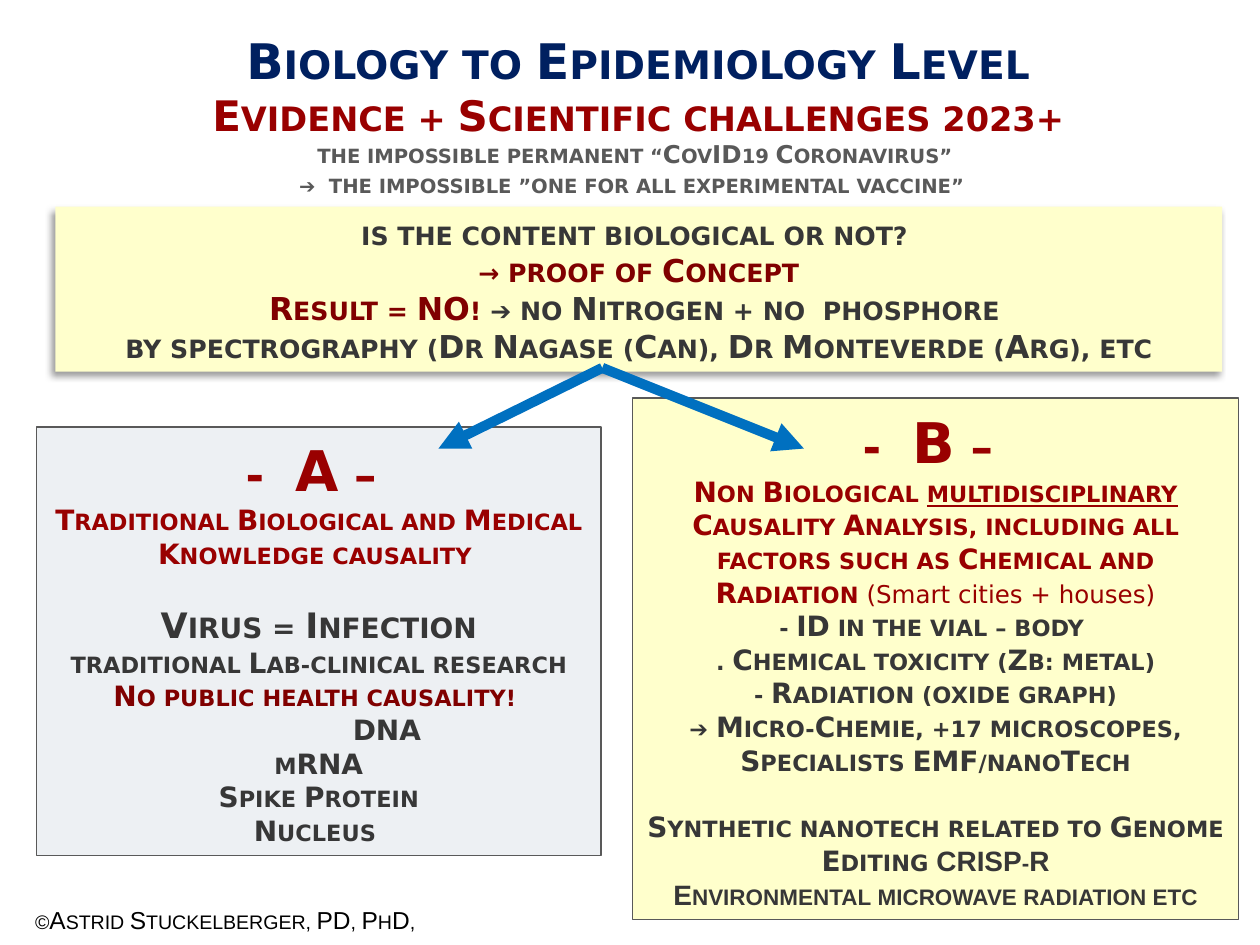
"""Build the slide that sets biological against non-biological causality."""
from dataclasses import dataclass
from typing import Optional

from lxml import etree
from pptx import Presentation
from pptx import util as u
from pptx.dml.color import RGBColor
from pptx.enum import shapes, text
from pptx.oxml import ns

SANS, ARIAL = "DejaVu Sans", "Arial"
NAVY, RED, WINE = "002060", "990000", "800000"
DARK, GREY, BLUE, BLACK = "373737", "595959", "0070C0", "000000"
CREAM, PALE = "FFFFCC", "EDF0F3"


@dataclass
class Run:
    """A stretch of text in one style."""
    words: str
    size: int = 16
    hue: str = DARK
    font: str = SANS
    bold: bool = True
    caps: bool = True
    under: bool = False


@dataclass
class Para:
    """A paragraph with its space before (points) and indent (inches)."""
    runs: list[Run]
    gap: float = 0
    left: float = 0


@dataclass
class Box:
    """A block of text, on a filled panel if it has a fill."""
    left: float
    top: float
    width: float
    height: float
    paras: list[Para]
    fill: Optional[str] = None
    edge: Optional[str] = None
    shade: bool = False
    align: text.PP_ALIGN = text.PP_ALIGN.CENTER


def line(words: str, size: int = 16, hue: str = DARK, gap: float = 0,
         left: float = 0) -> Para:
    """Return a paragraph of one run."""
    return Para([Run(words, size, hue)], gap, left)


def tint(code: str) -> RGBColor:
    """Return the colour for a hex string."""
    return RGBColor.from_string(code)


def add_shade(shape) -> None:
    """Give a shape a soft shadow to the lower left."""
    effects = shape._element.spPr.find(ns.qn("a:effectLst"))
    outer = etree.SubElement(effects, ns.qn("a:outerShdw"), blurRad=str(u.Pt(4)),
                             dist=str(u.Pt(3)), dir="8100000", algn="tr", rotWithShape="0")
    hue = etree.SubElement(outer, ns.qn("a:srgbClr"), val=BLACK)
    etree.SubElement(hue, ns.qn("a:alpha"), val="40000")


def add_run(para, run: Run) -> None:
    """Add one styled run to a paragraph."""
    part = para.add_run()
    part.text = run.words
    font = part.font
    font.name, font.size, font.bold = run.font, u.Pt(run.size), run.bold
    font.color.rgb = tint(run.hue)
    if run.under:
        font.underline = True
    if run.caps:
        part._r.get_or_add_rPr().set("cap", "small")


def add_box(slide, box: Box) -> None:
    """Draw a box and its text."""
    place = [u.Inches(n) for n in (box.left, box.top, box.width, box.height)]
    if box.fill:
        shape = slide.shapes.add_shape(shapes.MSO_SHAPE.RECTANGLE, *place)
        shape.shadow.inherit = False
        shape.fill.solid()
        shape.fill.fore_color.rgb = tint(box.fill)
        if box.edge:
            shape.line.color.rgb = tint(box.edge)
            shape.line.width = u.Pt(0.75)
        else:
            shape.line.fill.background()
        if box.shade:
            add_shade(shape)
    else:
        shape = slide.shapes.add_textbox(*place)
    frame = shape.text_frame
    frame.word_wrap = True
    frame.auto_size = text.MSO_AUTO_SIZE.SHAPE_TO_FIT_TEXT
    for index, item in enumerate(box.paras):
        para = frame.add_paragraph() if index else frame.paragraphs[0]
        para.alignment = box.align
        if item.gap:
            para.space_before = u.Pt(item.gap)
        if item.left:
            para._p.get_or_add_pPr().set("marL", str(u.Inches(item.left)))
        for run in item.runs:
            add_run(para, run)


def add_arrow(slide, start: tuple[float, float], end: tuple[float, float]) -> None:
    """Draw a thick arrow between two points."""
    arrow = slide.shapes.add_connector(shapes.MSO_CONNECTOR.STRAIGHT,
                                       *(u.Inches(n) for n in start + end))
    arrow.line.color.rgb = tint(BLUE)
    arrow.line.width = u.Pt(5.75)
    etree.SubElement(arrow.line._get_or_add_ln(), ns.qn("a:tailEnd"), type="triangle")
    etree.SubElement(arrow._element.spPr, ns.qn("a:effectLst"))


TITLE = Box(0.04, 0.19, 10.05, 1.45, [
    line("Biology to Epidemiology Level", 28, NAVY),
    line("Evidence + Scientific challenges 2023+", 24, RED),
    line("the impossible permanent “CovID19 Coronavirus” ", 14, GREY),
    line("➔  the impossible ”one for all experimental vaccine”  ", 14, GREY),
])
RIGHT = Box(5.02, 3.16, 4.81, 4.14, [
    line("-  B – ", 32, RED),
    Para([
        Run("Non Biological ", hue=RED),
        Run("multidisciplinary", hue=RED, under=True),
        Run(" Causality Analysis, including all factors such as Chemical and Radiation ",
            hue=RED),
        Run("(Smart cities + houses)", 14, RED, bold=False, caps=False),
    ]),
    line("- ID in the vial – body "),
    line(". Chemical toxicity (Zb: metal)"),
    line("- Radiation (oxide graph)"),
    line("➔ Micro-Chemie, +17 microscopes, Specialists EMF/nanoTech"),
    Para([Run("Synthetic nanotech related to Genome Editing "),
          Run("CRISP-R", font=ARIAL)], gap=19),
    Para([Run("Environmental microwave radiation etc", font=ARIAL)]),
], CREAM, GREY)
LEFT = Box(0.29, 3.39, 4.48, 3.4, [
    line("-  A – ", 32, RED),
    line("Traditional Biological and Medical Knowledge causality ", hue=RED),
    line("Virus = Infection", 20, gap=19),
    line("traditional Lab-clinical research"),
    line("No public health causality! ", hue=WINE),
    line("DNA", left=0.54),
    line("mRNA"),
    line("Spike Protein"),
    line("Nucleus "),
], PALE, GREY)
PROOF = Box(0.44, 1.64, 9.26, 1.31, [
    line("is the content biological or not? ", 18),
    line("→ proof of Concept", 18, WINE),
    Para([Run("Result = NO! ", 18, WINE), Run("➔ no Nitrogen + no  phosphore ", 18)]),
    line("by spectrography (Dr Nagase (Can), Dr Monteverde (Arg), etc", 18),
], CREAM, shade=True)
CREDIT = Box(0.18, 7.13, 3.54, 0.34, [
    Para([Run("©Astrid Stuckelberger, PD, PhD,", 14, BLACK, ARIAL, bold=False)]),
], align=text.PP_ALIGN.LEFT)


def main() -> None:
    """Build and save the slide."""
    deck = Presentation()
    deck.slide_width, deck.slide_height = u.Inches(10), u.Inches(7.5)
    slide = deck.slides.add_slide(deck.slide_layouts[6])
    for box in (TITLE, RIGHT, LEFT, PROOF, CREDIT):
        add_box(slide, box)
    for end in ((6.38, 3.56), (3.48, 3.56)):
        add_arrow(slide, (4.78, 2.92), end)
    deck.save("out.pptx")


if __name__ == "__main__":
    main()
